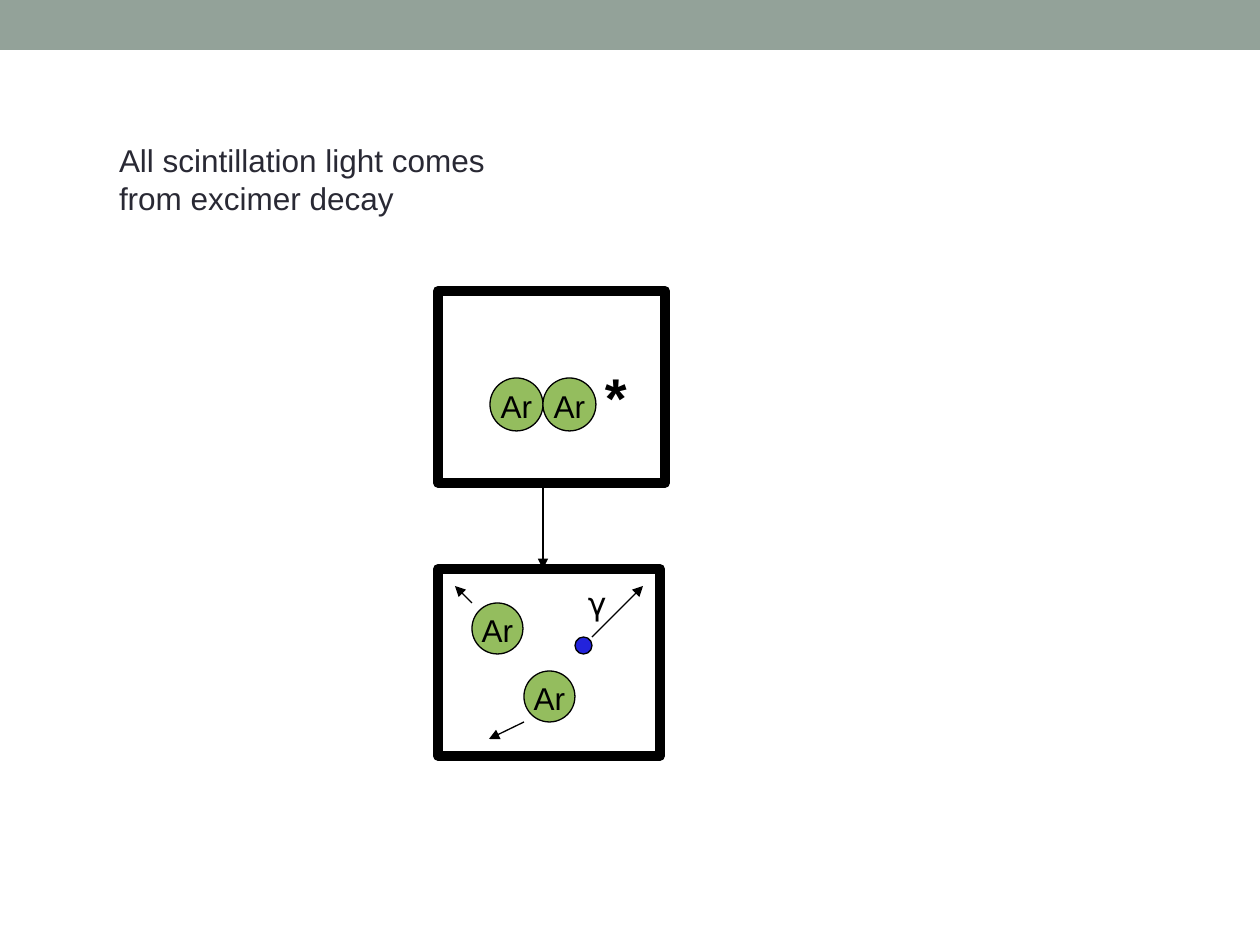
"""Build a slide showing argon excimer decay into two atoms and a photon."""
import pptx
import pptx.util
from pptx.dml.color import RGBColor
from pptx.enum.shapes import MSO_CONNECTOR, MSO_SHAPE
from pptx.enum.text import MSO_ANCHOR, PP_ALIGN
from pptx.oxml.ns import qn
import lxml.etree

PX = 914400 / 126
BLACK = RGBColor(0x00, 0x00, 0x00)
WHITE = RGBColor(0xFF, 0xFF, 0xFF)
SAGE = RGBColor(0x93, 0xA2, 0x99)
GREEN = RGBColor(0x94, 0xBD, 0x5E)
BLUE = RGBColor(0x23, 0x23, 0xDC)
INK = RGBColor(0x29, 0x29, 0x34)


def add_shape(kind, box, fill, line_pt):
    sp = s.shapes.add_shape(kind, *[round(v * PX) for v in box])
    sp.shadow.inherit = False
    sp.fill.solid()
    sp.fill.fore_color.rgb = fill
    if line_pt:
        sp.line.color.rgb = BLACK
        sp.line.width = pptx.util.Pt(line_pt)
    else:
        sp.line.fill.background()
    return sp


def set_text(sp, text, size, font, color, top=6):
    tf = sp.text_frame
    tf.text = text
    tf.margin_left = tf.margin_right = round(13 * PX)
    tf.margin_top, tf.margin_bottom = round(top * PX), round(6 * PX)
    f = tf.paragraphs[0].runs[0].font
    f.size, f.name, f.color.rgb = pptx.util.Pt(size), font, color
    return tf


prs = pptx.Presentation()
prs.slide_width, prs.slide_height = round(1260 * PX), round(945 * PX)
s = prs.slides.add_slide(prs.slide_layouts[6])

add_shape(MSO_SHAPE.RECTANGLE, (0, 0, 1260, 50), SAGE, 0)

for box in [(438, 291, 227, 192), (438, 569, 222, 187)]:
    sp = add_shape(MSO_SHAPE.RECTANGLE, box, WHITE, 5.67)
    lxml.etree.SubElement(sp.line._get_or_add_ln(), qn("a:round"))

for x, y, d in [(490, 378, 53), (543, 378, 53), (524, 671, 51), (472, 603, 51)]:
    sp = add_shape(MSO_SHAPE.OVAL, (x, y, d, d), GREEN, 0.75)
    tf = set_text(sp, "Ar", 18, "Arial", BLACK, top=9)
    tf.word_wrap = False
    tf.vertical_anchor = MSO_ANCHOR.MIDDLE
    tf.paragraphs[0].alignment = PP_ALIGN.CENTER

add_shape(MSO_SHAPE.OVAL, (575, 637, 17, 17), BLUE, 0.75)

for ends in [(472, 603, 455, 586), (524, 722, 489, 739),
             (592, 637, 643, 586), (543, 483, 543, 569)]:
    c = s.shapes.add_connector(MSO_CONNECTOR.STRAIGHT, *[round(v * PX) for v in ends])
    c.line.color.rgb = BLACK
    c.line.width = pptx.util.Pt(0.75)
    lxml.etree.SubElement(c.line._get_or_add_ln(), qn("a:tailEnd"), type="triangle")
    lxml.etree.SubElement(c._element.spPr, qn("a:effectLst"))

for box, text, size, font, color, top, bold, spacing in [
    ((592, 352, 87, 67), "*", 32, "Arial", BLACK, 10, True, 1.0),
    ((575, 586, 86, 6), "γ", 18, "DejaVu Sans", BLACK, 6, False, 0.98),
    ((106, 135, 436, 89), "All scintillation light comes from excimer decay",
     18, "Arial", INK, 6, False, 1.0),
]:
    sp = s.shapes.add_textbox(*[round(v * PX) for v in box])
    tf = set_text(sp, text, size, font, color, top)
    tf.word_wrap = True
    p = tf.paragraphs[0]
    p.line_spacing = spacing
    p.runs[0].font.bold = bold

prs.save("out.pptx")
